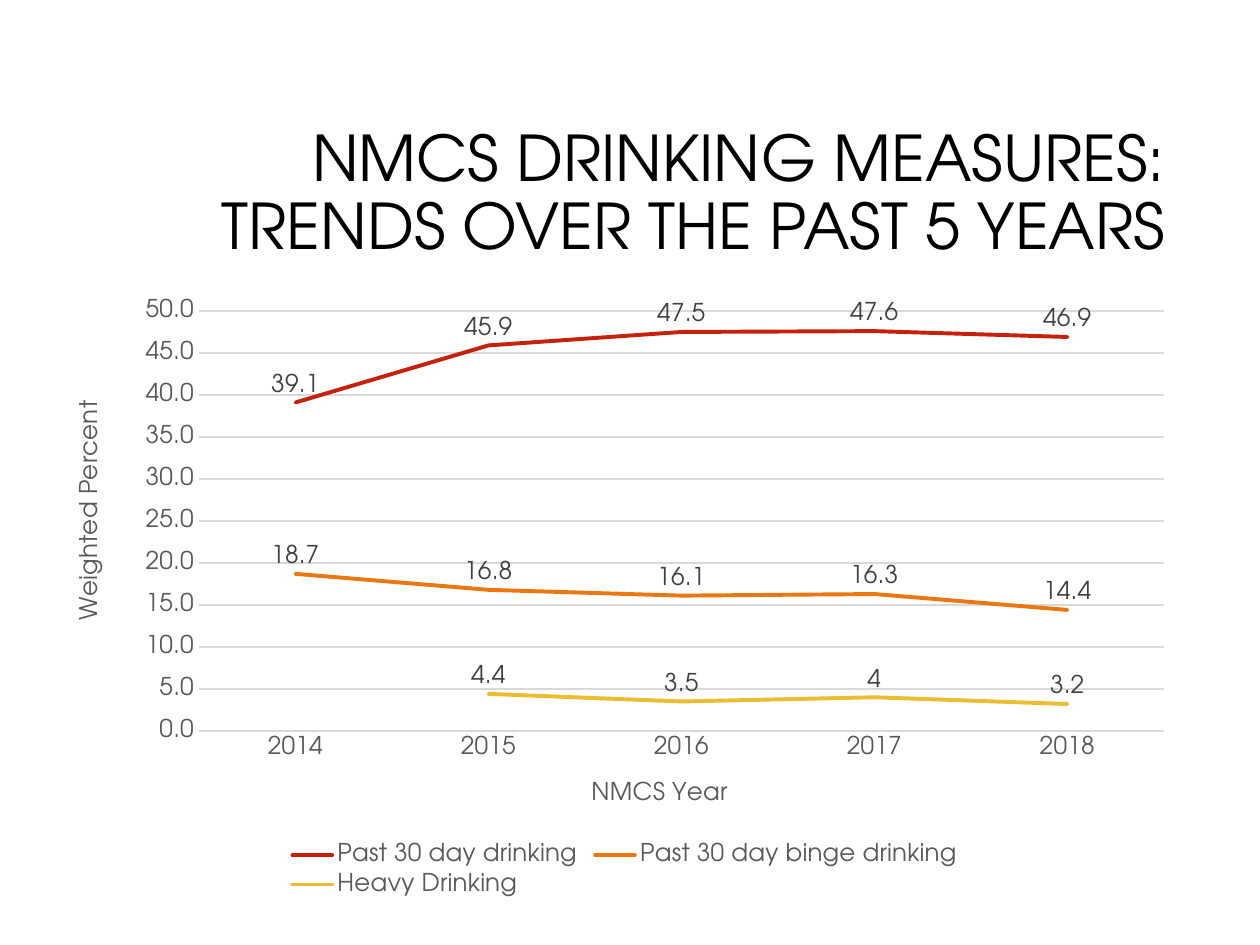
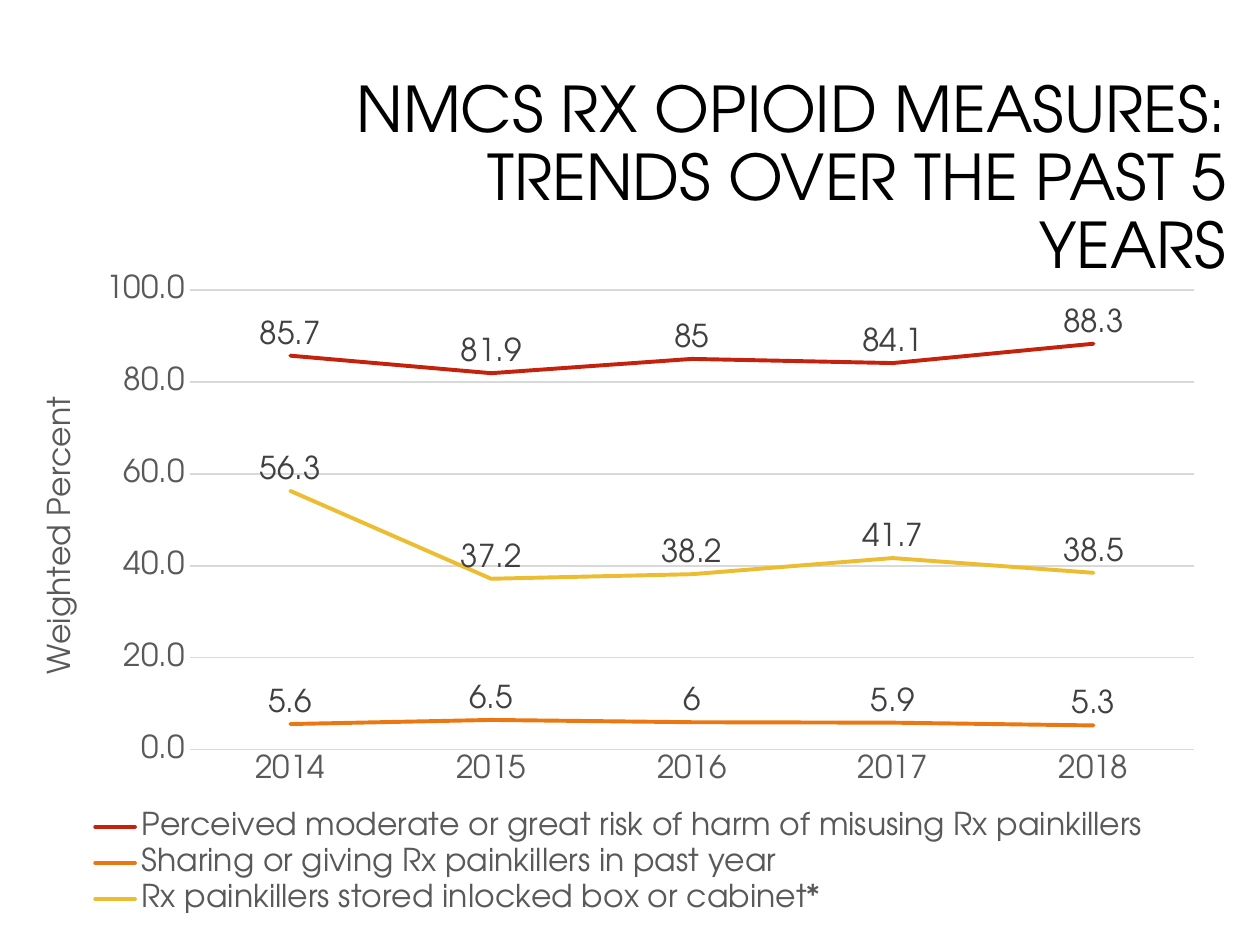
from lxml import etree
from pptx import Presentation, util as u
from pptx.chart import data as cd
from pptx.dml import color as col
from pptx.enum import chart as ce, text as te
from pptx.oxml import ns

SCALE = 914400 / 126
FONT = "TeX Gyre Adventor"
BLACK, GREY, DARK, PALE = "000000", "595959", "404040", "D9D9D9"
HUES = ["C4220D", "EB7712", "ECBD31"]
YEARS = ["2014", "2015", "2016", "2017", "2018"]


def px(n):
    """Turn px into EMU."""
    return u.Emu(round(n * SCALE))


def rgb(hexa):
    """Turn a hex string into a colour."""
    return col.RGBColor.from_string(hexa)


def put(obj, vals):
    """Set the attributes of an object from a dict."""
    for key, val in vals.items():
        setattr(obj, key, val)


def style(font, size, hue):
    """Format a font."""
    put(font, {"name": FONT, "size": u.Pt(size), "bold": False})
    font.color.rgb = rgb(hue)


def stroke(line, hue, width):
    """Format a line."""
    line.color.rgb = rgb(hue)
    line.width = u.Pt(width)


def place(node, index, box, frame, inner=False):
    """Fix a chart part at a px box (left, top, width, height) on the slide."""
    for old in node.findall(ns.qn("c:layout")):
        node.remove(old)
    layout = etree.Element(ns.qn("c:layout"))
    man = etree.SubElement(layout, ns.qn("c:manualLayout"))
    vals = {"layoutTarget": "inner"} if inner else {}
    vals.update(xMode="edge", yMode="edge")
    left, top, wide, high = frame
    vals.update(x=(box[0] - left) / wide, y=(box[1] - top) / high)
    if len(box) == 4:
        vals.update(w=box[2] / wide, h=box[3] / high)
    for key, val in vals.items():
        etree.SubElement(man, ns.qn("c:" + key)).set("val", str(val))
    node.insert(index, layout)


def head(slide, words, box):
    """Fill and place the slide title."""
    title = slide.shapes.title
    put(title, dict(zip(("left", "top", "width", "height"), map(px, box))))
    frame = title.text_frame
    frame.text = words
    put(frame, {"word_wrap": True, "vertical_anchor": te.MSO_ANCHOR.MIDDLE,
                "auto_size": te.MSO_AUTO_SIZE.NONE})
    para = frame.paragraphs[0]
    put(para, {"alignment": te.PP_ALIGN.RIGHT, "line_spacing": 0.9})
    style(para.runs[0].font, 36, BLACK)


def label(axis, words, size, spot, frame, turn=0):
    """Give an axis a title at a px spot, turned by some degrees."""
    body = axis.axis_title.text_frame
    body.text = words
    body._txBody.bodyPr.set("rot", str(turn * 60000))
    style(body.paragraphs[0].runs[0].font, size, GREY)
    place(axis.axis_title._element, 1, spot, frame)


def axes(chart, size, top, step):
    """Format both axes and the grid."""
    cat, val = chart.category_axis, chart.value_axis
    for axis in (cat, val):
        put(axis, {"major_tick_mark": ce.XL_TICK_MARK.NONE,
                   "minor_tick_mark": ce.XL_TICK_MARK.NONE})
        style(axis.tick_labels.font, size, GREY)
    put(val, {"minimum_scale": 0, "maximum_scale": top, "major_unit": step,
              "has_major_gridlines": True})
    put(val.tick_labels, {"number_format": "#,##0.0",
                          "number_format_is_linked": False})
    val.format.line.fill.background()
    stroke(cat.format.line, PALE, 0.75)
    stroke(val.major_gridlines.format.line, PALE, 0.75)


def trend(slide, rows, size, top, step, frame, plot, key):
    """Add a line chart with value labels and a legend."""
    data = cd.CategoryChartData()
    data.categories = YEARS
    for name, vals in rows.items():
        data.add_series(name, vals)
    chart = slide.shapes.add_chart(
        ce.XL_CHART_TYPE.LINE, *map(px, frame), data).chart
    put(chart, {"has_title": False, "has_legend": True})
    style(chart.font, size, BLACK)
    chart.plots[0].vary_by_categories = False
    for line, hue in zip(chart.plots[0].series, HUES):
        line.smooth = False
        stroke(line.format.line, hue, 2.25)
        line._element.xpath("c:spPr/a:ln")[0].set("cap", "rnd")
        tags = line.data_labels
        put(tags, {"show_value": True,
                   "position": ce.XL_LABEL_POSITION.ABOVE})
        style(tags.font, size, DARK)
    axes(chart, size, top, step)
    put(chart.legend, {"position": ce.XL_LEGEND_POSITION.BOTTOM,
                       "include_in_layout": False})
    style(chart.legend.font, size, GREY)
    place(chart.legend._element, 1, key, frame)
    area = chart._chartSpace.find(".//" + ns.qn("c:plotArea"))
    place(area, 0, plot, frame, inner=True)
    return chart


def drink(slide):
    """Build the slide on drinking."""
    head(slide, "NMCS DRINKING MEASURES: TRENDS OVER THE PAST 5 YEARS",
         (136, 106, 1042, 178))
    rows = {"Past 30 day drinking": (39.1, 45.9, 47.5, 47.6, 46.9),
            "Past 30 day binge drinking": (18.7, 16.8, 16.1, 16.3, 14.4),
            "Heavy Drinking": (None, 4.4, 3.5, 4, 3.2)}
    frame = (63, 287, 1124, 616)
    chart = trend(slide, rows, 14, 50, 5, frame,
                  (199, 311, 965, 420), (283, 838, 684, 64))
    label(chart.category_axis, "NMCS Year", 14, (587, 775), frame)
    label(chart.value_axis, "Weighted Percent", 14, (72, 396), frame, -90)


def opioid(slide):
    """Build the slide on opioids."""
    head(slide, "NMCS RX OPIOID MEASURES: TRENDS OVER THE PAST 5 YEARS",
         (319, 73, 920, 215))
    rows = {"Perceived moderate or great risk of harm of misusing "
            "Rx painkillers": (85.7, 81.9, 85, 84.1, 88.3),
            "Sharing or giving Rx painkillers in past year":
            (5.6, 6.5, 6, 5.9, 5.3),
            "Rx painkillers stored inlocked box or cabinet*":
            (56.3, 37.2, 38.2, 41.7, 38.5)}
    frame = (10, 262, 1207, 662)
    chart = trend(slide, rows, 18, 100, 20, frame,
                  (190, 290, 1004, 460), (83, 806, 1072, 114))
    label(chart.value_axis, "Weighted Percent", 18, (37, 391), frame, -90)


def main():
    """Build and save the deck."""
    deck = Presentation()
    put(deck, {"slide_width": px(1260), "slide_height": px(945)})
    for build in (drink, opioid):
        build(deck.slides.add_slide(deck.slide_layouts[5]))
    deck.save("out.pptx")


if __name__ == "__main__":
    main()
